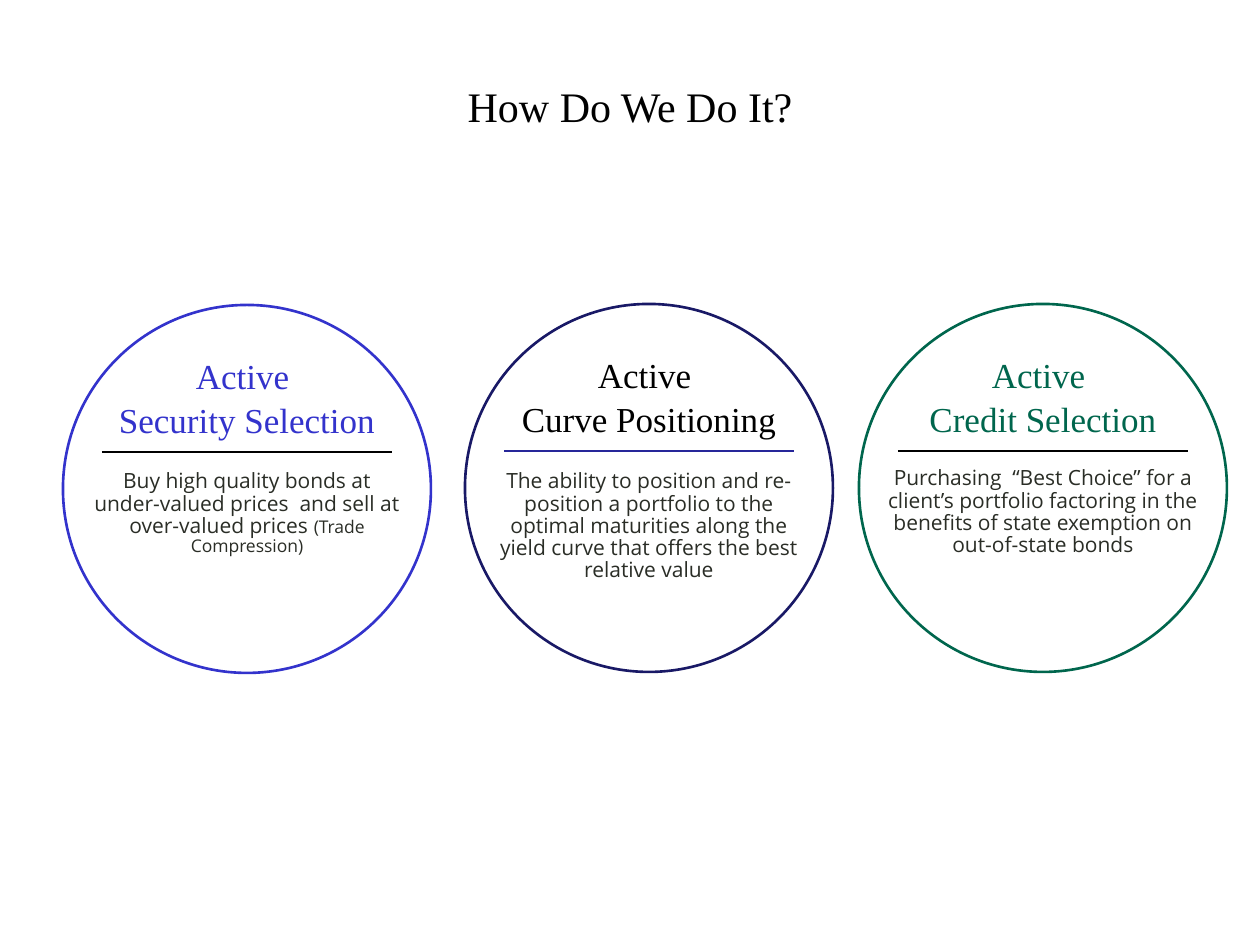
import pptx
import pptx.dml.color
import pptx.enum.shapes
import pptx.enum.text
import pptx.oxml.ns
import pptx.util
from lxml import etree

RGBColor = pptx.dml.color.RGBColor
BLACK = RGBColor(0x00, 0x00, 0x00)
BLUE = RGBColor(0x33, 0x33, 0xCC)
NAVY = RGBColor(0x19, 0x19, 0x66)
INDIGO = RGBColor(0x26, 0x26, 0x99)
GREEN = RGBColor(0x00, 0x66, 0x4D)
CHARCOAL = RGBColor(0x2A, 0x2D, 0x26)

SERIF = "Times New Roman"
SANS = "Open Sans"
TITLE = "How Do We Do It?"
STRATEGIES = [
    {
        "left": 63, "top": 305, "body_top": 465,
        "ring": BLUE, "heading_color": BLUE, "rule": BLACK,
        "heading": ["Active ", "Security Selection"],
        "body": [
            ("Buy high quality bonds at under-valued prices  and sell at over-valued prices ", 12),
            ("(Trade Compression)", 10),
        ],
    },
    {
        "left": 465, "top": 304, "body_top": 465,
        "ring": NAVY, "heading_color": BLACK, "rule": INDIGO,
        "heading": ["Active ", "Curve Positioning"],
        "body": [
            ("The ability to position and re-position a portfolio to the optimal "
             "maturities along the yield curve that offers the best relative value", 12),
        ],
    },
    {
        "left": 859, "top": 304, "body_top": 462,
        "ring": GREEN, "heading_color": GREEN, "rule": BLACK,
        "heading": ["Active ", "Credit Selection"],
        "body": [
            ("Purchasing  “Best Choice” for a client’s portfolio factoring in the "
             "benefits of state exemption on out-of-state bonds", 12),
        ],
    },
]

DIAMETER = 368
HEADING_WIDTH, HEADING_HEIGHT, HEADING_DROP = 316, 97, 41
BODY_WIDTH, BODY_HEIGHT = 336, 115
RULE_WIDTH, RULE_DROP = 290, 147


def px(length):
    return pptx.util.Emu(round(length * 914400 / 126))


def add_text(shapes, box, lines, font_name, color, line_spacing=1.0,
             anchor=pptx.enum.text.MSO_ANCHOR.TOP):
    frame = shapes.add_textbox(*map(px, box)).text_frame
    frame.word_wrap = True
    frame.vertical_anchor = anchor
    paragraph = frame.paragraphs[0]
    paragraph.alignment = pptx.enum.text.PP_ALIGN.CENTER
    paragraph.line_spacing = line_spacing
    for index, runs in enumerate(lines):
        if index:
            paragraph.add_line_break()
        for text, size in runs:
            run = paragraph.add_run()
            run.text = text
            run.font.name = font_name
            run.font.size = pptx.util.Pt(size)
            run.font.color.rgb = color


def add_strategy(slide, strategy):
    shapes = slide.shapes.add_group_shape().shapes
    left, top = strategy["left"], strategy["top"]

    def centred(width):
        return left + (DIAMETER - width) // 2

    circle = shapes.add_shape(pptx.enum.shapes.MSO_SHAPE.OVAL,
                              px(left), px(top), px(DIAMETER), px(DIAMETER))
    circle.shadow.inherit = False
    circle.fill.background()
    circle.line.color.rgb = strategy["ring"]
    circle.line.width = pptx.util.Pt(1.5)

    add_text(shapes, (centred(HEADING_WIDTH), top + HEADING_DROP, HEADING_WIDTH, HEADING_HEIGHT),
             [[(line, 20)] for line in strategy["heading"]],
             SERIF, strategy["heading_color"], 1.05)
    add_text(shapes, (centred(BODY_WIDTH), strategy["body_top"], BODY_WIDTH, BODY_HEIGHT),
             [strategy["body"]], SANS, CHARCOAL, 0.88)

    start, level = centred(RULE_WIDTH), top + RULE_DROP
    rule = shapes.add_connector(pptx.enum.shapes.MSO_CONNECTOR.STRAIGHT,
                                px(start), px(level), px(start + RULE_WIDTH), px(level))
    rule.line.color.rgb = strategy["rule"]
    rule.line.width = pptx.util.Pt(0.75)
    etree.SubElement(rule._element.spPr, pptx.oxml.ns.qn("a:effectLst"))


def main():
    presentation = pptx.Presentation()
    presentation.slide_width = px(1260)
    presentation.slide_height = px(945)
    slide = presentation.slides.add_slide(presentation.slide_layouts[6])
    add_text(slide.shapes, (168, 53, 924, 84), [[(TITLE, 24)]], SERIF, BLACK,
             anchor=pptx.enum.text.MSO_ANCHOR.BOTTOM)
    for strategy in STRATEGIES:
        add_strategy(slide, strategy)
    presentation.save("out.pptx")


if __name__ == "__main__":
    main()
